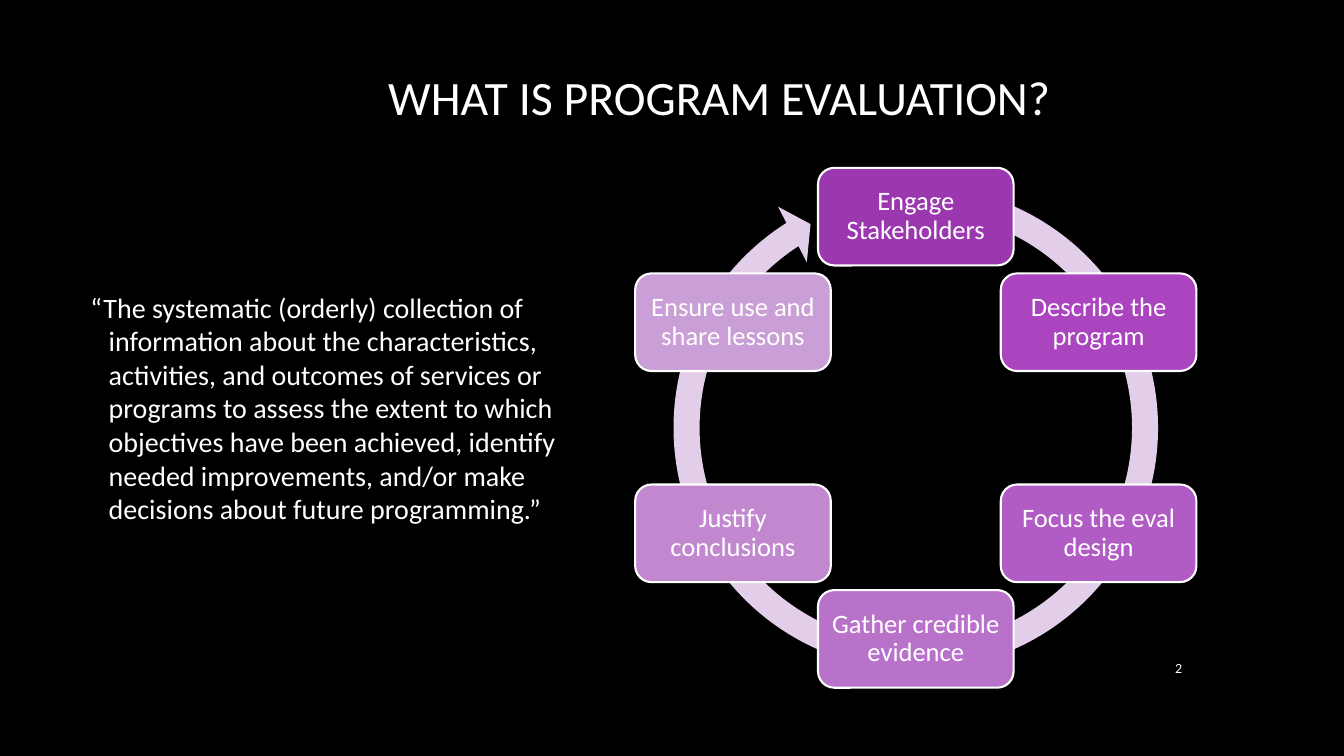
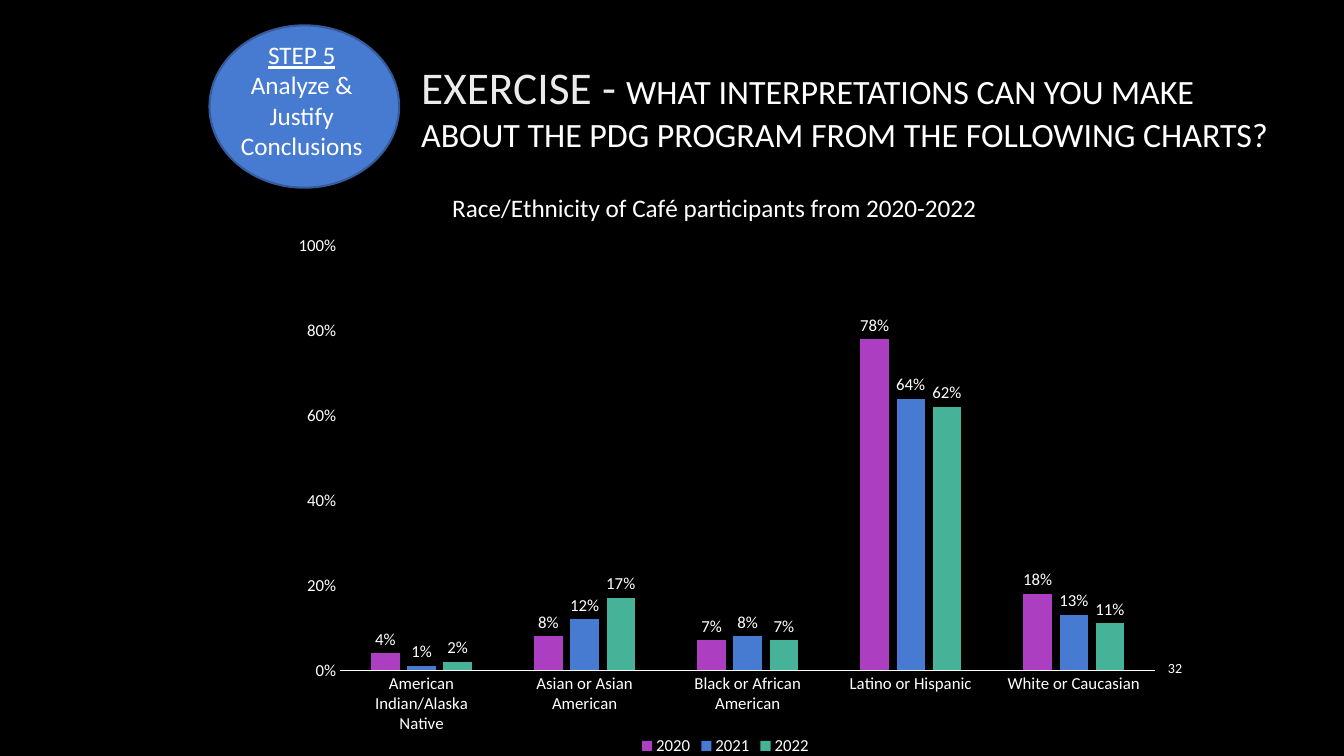
from dataclasses import dataclass
from math import cos, radians, sin

from pptx import Presentation
from pptx.chart.data import CategoryChartData
from pptx.dml.color import RGBColor
from pptx.enum.chart import (
    XL_CHART_TYPE as ChartType,
    XL_LABEL_POSITION as LabelPosition,
    XL_LEGEND_POSITION as LegendPosition,
    XL_TICK_MARK as TickMark,
)
from pptx.enum.shapes import MSO_SHAPE as Shape
from pptx.enum.text import MSO_ANCHOR as Anchor, MSO_AUTO_SIZE as AutoSize, PP_ALIGN as Align
from pptx.oxml.ns import qn
from pptx.oxml.xmlchemy import OxmlElement
from pptx.util import Cm, Pt


@dataclass(frozen=True)
class Theme:
    font: str = "Calibri"
    background: str = "000000"
    text: str = "FFFFFF"
    soft_text: str = "EBEBEB"
    ring: str = "E3CEE9"
    badge: str = "477BD1"
    badge_edge: str = "355B9B"
    steps: tuple = ("9C38AF", "AA44BF", "B15BC4", "B972CA", "C188D0", "CA9ED6")
    series: tuple = ("AC3EC1", "477BD1", "46B298")
    title_size: float = 34.2
    lead_size: float = 32.4
    question_size: float = 24.3
    body_size: float = 20
    step_size: float = 19
    caption_size: float = 18
    chart_size: float = 12
    page_size: float = 10


THEME = Theme()
PAGE_NUMBER_BOX = (28.52, 16.31, 1.52, 1.04)

# Evaluation cycle, in cm
CYCLE_CENTRE = (23.08, 10.78)
CYCLE_RADIUS = 5.32
RING_SIZE = 13.13
RING_ADJUSTMENTS = (0.05, 3.13, 142.47, 171.16, 0.06)
STEP_SIZE = (4.93, 2.46)
STEPS = (
    "Engage Stakeholders",
    "Describe the program",
    "Focus the eval design",
    "Gather credible evidence",
    "Justify conclusions",
    "Ensure use and share lessons",
)
DEFINITION = (
    "“The systematic (orderly) collection of information about the characteristics, "
    "activities, and outcomes of services or programs to assess the extent to which "
    "objectives have been achieved, identify needed improvements, and/or make "
    "decisions about future programming.”"
)

GROUPS = (
    "American Indian/Alaska Native",
    "Asian or Asian American",
    "Black or African American",
    "Latino or Hispanic",
    "White or Caucasian",
)
SHARES = {
    "2020": (0.04, 0.08, 0.07, 0.78, 0.18),
    "2021": (0.01, 0.12, 0.08, 0.64, 0.13),
    "2022": (0.02, 0.17, 0.07, 0.62, 0.11),
}


# Shared helpers
def place(box):
    return [Cm(length) for length in box]


def centred_box(centre, size):
    return [c - s / 2 for c, s in zip(centre, size)] + list(size)


def set_font(font, size, colour=THEME.text):
    font.name = THEME.font
    font.size = Pt(size)
    font.color.rgb = RGBColor.from_string(colour)


def set_fill(fill, colour):
    fill.solid()
    fill.fore_color.rgb = RGBColor.from_string(colour)


def write(paragraph, text, size, align=Align.LEFT):
    paragraph.text = text
    paragraph.alignment = align
    set_font(paragraph.font, size)


# Kinds of element
def add_titled_slide(prs, title_box, page_number):
    slide = prs.slides.add_slide(prs.slide_layouts[5])
    title = slide.shapes.title
    title.left, title.top, title.width, title.height = place(title_box)
    title.text_frame.auto_size = AutoSize.NONE
    title.text_frame.vertical_anchor = Anchor.MIDDLE
    page = add_text(slide, PAGE_NUMBER_BOX)
    write(page, page_number, THEME.page_size, Align.RIGHT)
    return slide, title.text_frame.paragraphs[0]


def add_text(slide, box):
    frame = slide.shapes.add_textbox(*place(box)).text_frame
    frame.word_wrap = True
    frame.vertical_anchor = Anchor.MIDDLE
    return frame.paragraphs[0]


def add_hanging_text(slide, box, text, margin, hang):
    paragraph = add_text(slide, box)
    write(paragraph, text, THEME.body_size)
    properties = paragraph._p.get_or_add_pPr()
    properties.set("marL", str(Cm(margin)))
    properties.set("indent", str(-Cm(hang)))


def add_figure(slide, preset, box, fill, edge=None):
    figure = slide.shapes.add_shape(preset, *place(box))
    figure.shadow.inherit = False
    set_fill(figure.fill, fill)
    if edge:
        set_fill(figure.line.fill, edge)
        figure.line.width = Pt(1.5)
    else:
        figure.line.fill.background()
    return figure


def set_insets(frame, left, top, right, bottom):
    frame.margin_left, frame.margin_top = Cm(left), Cm(top)
    frame.margin_right, frame.margin_bottom = Cm(right), Cm(bottom)
    frame.vertical_anchor = Anchor.MIDDLE


def add_cycle(slide):
    ring_box = centred_box(CYCLE_CENTRE, (RING_SIZE, RING_SIZE))
    ring = add_figure(slide, Shape.CIRCULAR_ARROW, ring_box, THEME.ring)
    for index, value in enumerate(RING_ADJUSTMENTS):
        ring.adjustments[index] = value
    for index, (label, colour) in enumerate(zip(STEPS, THEME.steps)):
        angle = radians(index * 360 / len(STEPS) - 90)
        centre = (
            CYCLE_CENTRE[0] + CYCLE_RADIUS * cos(angle),
            CYCLE_CENTRE[1] + CYCLE_RADIUS * sin(angle),
        )
        step_box = centred_box(centre, STEP_SIZE)
        step = add_figure(slide, Shape.ROUNDED_RECTANGLE, step_box, colour, THEME.text)
        set_insets(step.text_frame, 0.2, 0.2, 0.2, 0.2)
        paragraph = step.text_frame.paragraphs[0]
        write(paragraph, label, THEME.step_size, Align.CENTER)
        paragraph.line_spacing = 0.9


def add_step_badge(slide, box, step, name):
    badge = add_figure(slide, Shape.OVAL, box, THEME.badge, THEME.badge_edge)
    frame = badge.text_frame
    set_insets(frame, 0, 0, 0.13, 0.33)
    write(frame.paragraphs[0], step, THEME.caption_size, Align.CENTER)
    frame.paragraphs[0].font.underline = True
    write(frame.add_paragraph(), name, THEME.caption_size, Align.CENTER)


def set_layout(part, **fractions):
    """Fix a chart part's position, as fractions of the chart."""
    layout = part.find(qn("c:layout"))
    if layout is None:
        layout = OxmlElement("c:layout")
        part.insert(len(part.findall(qn("c:tx"))), layout)
    manual = OxmlElement("c:manualLayout")
    layout.append(manual)
    settings = {"xMode": "edge", "yMode": "edge", **fractions}
    if "w" in fractions:
        settings = {"layoutTarget": "inner", **settings}
    for tag, value in settings.items():
        setting = OxmlElement(f"c:{tag}")
        setting.set("val", str(value))
        manual.append(setting)


def add_share_chart(slide, box, title):
    data = CategoryChartData(number_format="0%")
    data.categories = GROUPS
    for year, shares in SHARES.items():
        data.add_series(year, shares)
    chart = slide.shapes.add_chart(ChartType.COLUMN_CLUSTERED, *place(box), data).chart
    set_font(chart.font, THEME.chart_size)

    # Title and legend
    heading = chart.chart_title
    write(heading.text_frame.paragraphs[0], title, THEME.caption_size, Align.CENTER)
    heading.text_frame.paragraphs[0].font.bold = False
    set_layout(heading._element, x=0.19, y=0.04)
    chart.has_legend = True
    chart.legend.position = LegendPosition.BOTTOM
    chart.legend.include_in_layout = False
    set_font(chart.legend.font, THEME.chart_size)

    # Axes
    for axis in (chart.category_axis, chart.value_axis):
        axis.has_major_gridlines = False
        axis.major_tick_mark = axis.minor_tick_mark = TickMark.NONE
        set_font(axis.tick_labels.font, THEME.chart_size)
    set_fill(chart.category_axis.format.line.fill, THEME.text)
    chart.category_axis.format.line.width = Pt(0.75)
    scale = chart.value_axis
    scale.minimum_scale, scale.maximum_scale, scale.major_unit = 0, 1, 0.2
    scale.tick_labels.number_format = "0%"
    scale.tick_labels.number_format_is_linked = False
    scale.format.line.fill.background()

    # Columns and their labels
    plot = chart.plots[0]
    plot.gap_width, plot.overlap = 219, -27
    plot.vary_by_categories = False
    for year, colour in zip(plot.series, THEME.series):
        set_fill(year.format.fill, colour)
        labels = year.data_labels
        labels.show_value = True
        labels.position = LabelPosition.OUTSIDE_END
        labels.number_format = "0%"
        labels.number_format_is_linked = False
        set_font(labels.font, THEME.chart_size)
    plot_area = chart._chartSpace.find(f".//{qn('c:plotArea')}")
    set_layout(plot_area, x=0.07, y=0.14, w=0.91, h=0.71)


# Slides
def build_definition_slide(prs):
    slide, title = add_titled_slide(prs, (9.53, 1.27, 18.42, 2.34), "2")
    write(title, "WHAT IS PROGRAM EVALUATION?", THEME.title_size)
    add_hanging_text(slide, (1.7, 4.98, 13.13, 10.59), DEFINITION, 0.79, 0.46)
    add_cycle(slide)


def build_exercise_slide(prs):
    slide, title = add_titled_slide(prs, (10.36, 1.18, 22.66, 3.02), "32")
    title.alignment = Align.LEFT
    question = "WHAT INTERPRETATIONS CAN YOU MAKE ABOUT THE PDG PROGRAM FROM THE FOLLOWING CHARTS?"
    for text, size, colour in (
        ("EXERCISE - ", THEME.lead_size, THEME.soft_text),
        (question, THEME.question_size, THEME.text),
    ):
        run = title.add_run()
        run.text = text
        set_font(run.font, size, colour)
    add_step_badge(slide, (5.28, 0.64, 4.78, 4.09), "STEP 5", "Analyze & Justify Conclusions")
    add_share_chart(
        slide, (6.99, 4.09, 22.58, 15.06), "Race/Ethnicity of Café participants from 2020-2022"
    )


def main():
    prs = Presentation()
    prs.slide_width, prs.slide_height = Cm(33.87), Cm(19.05)
    set_fill(prs.slide_master.background.fill, THEME.background)
    build_definition_slide(prs)
    build_exercise_slide(prs)
    prs.save("out.pptx")


if __name__ == "__main__":
    main()
